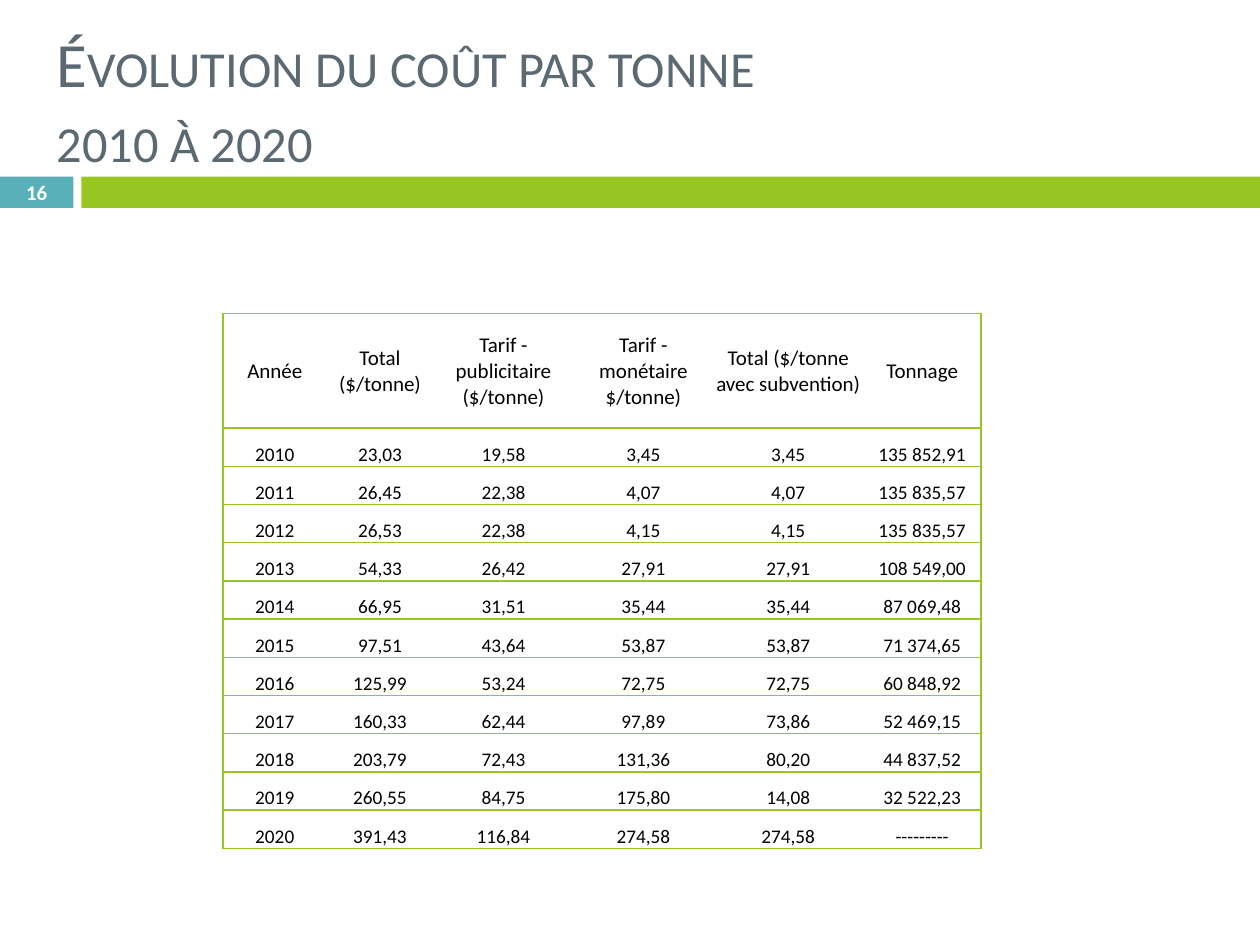
"""Build the slide on the yearly cost per tonne, with its table of rates."""
from dataclasses import dataclass

from lxml.etree import SubElement
from pptx import Presentation
from pptx.dml.color import RGBColor
from pptx.enum.shapes import MSO_SHAPE
from pptx.enum.text import MSO_ANCHOR, PP_ALIGN
from pptx.oxml.ns import qn
from pptx.util import Cm, Pt

FONT = "Calibri"
COLORS = {"teal": "59B0B9", "green": "98C723", "slate": "5B6973",
          "black": "000000", "white": "FFFFFF"}
COL_WIDTHS = [2.08, 2.16, 2.82, 2.82, 3.02, 2.38]
HEADER_HEIGHT, ROW_HEIGHT = 2.31, 0.77
HEADERS = ["Année", "Total ($/tonne)", "Tarif - publicitaire ($/tonne)",
           "Tarif - monétaire $/tonne)", "Total ($/tonne avec subvention)", "Tonnage"]
COSTS = [
    ["2010", "23,03", "19,58", "3,45", "3,45", "135 852,91"],
    ["2011", "26,45", "22,38", "4,07", "4,07", "135 835,57"],
    ["2012", "26,53", "22,38", "4,15", "4,15", "135 835,57"],
    ["2013", "54,33", "26,42", "27,91", "27,91", "108 549,00"],
    ["2014", "66,95", "31,51", "35,44", "35,44", "87 069,48"],
    ["2015", "97,51", "43,64", "53,87", "53,87", "71 374,65"],
    ["2016", "125,99", "53,24", "72,75", "72,75", "60 848,92"],
    ["2017", "160,33", "62,44", "97,89", "73,86", "52 469,15"],
    ["2018", "203,79", "72,43", "131,36", "80,20", "44 837,52"],
    ["2019", "260,55", "84,75", "175,80", "14,08", "32 522,23"],
    ["2020", "391,43", "116,84", "274,58", "274,58", "---------"],
]


@dataclass
class Box:
    """Place and size in centimetres."""
    left: float
    top: float
    width: float
    height: float

    def lengths(self) -> list:
        """Return the four lengths in the order the shape methods take."""
        return [Cm(v) for v in (self.left, self.top, self.width, self.height)]


@dataclass
class Bar:
    """A plain filled bar."""
    box: Box
    color: str


@dataclass
class Label:
    """A text box with one style."""
    box: Box
    lines: list
    size: float
    color: str
    align: PP_ALIGN = PP_ALIGN.LEFT
    bold: bool = False
    small_caps: bool = False


BARS = [Bar(Box(0, 3.56, 1.48, 0.63), "teal"),
        Bar(Box(1.64, 3.56, 23.76, 0.63), "green")]
LABELS = [
    Label(Box(0.89, 0.64, 23.6, 2.74), ["Évolution du coût par tonne", "2010 à 2020"],
          36, "slate", small_caps=True),
    Label(Box(0, 3.53, 1.48, 0.69), ["16"], 11.9, "white", PP_ALIGN.CENTER, bold=True),
]


def rgb(name: str) -> RGBColor:
    """Look up a named colour."""
    return RGBColor.from_string(COLORS[name])


def add_run(p, text: str, size: float, color: str, bold: bool = False):
    """Append one styled run to a paragraph."""
    r = p.add_run()
    r.text = text
    r.font.name, r.font.size, r.font.bold = FONT, Pt(size), bold
    r.font.color.rgb = rgb(color)
    return r


def draw_bar(s, bar: Bar) -> None:
    """Draw a filled bar without outline."""
    sp = s.shapes.add_shape(MSO_SHAPE.RECTANGLE, *bar.box.lengths())
    sp.shadow.inherit = False
    sp.fill.solid()
    sp.fill.fore_color.rgb = rgb(bar.color)
    sp.line.fill.background()


def draw_label(s, label: Label) -> None:
    """Draw a vertically centred text box."""
    tf = s.shapes.add_textbox(*label.box.lengths()).text_frame
    tf.word_wrap = True
    tf.vertical_anchor = MSO_ANCHOR.MIDDLE
    tf.margin_top = tf.margin_bottom = Cm(0.13)
    p = tf.paragraphs[0]
    p.alignment = label.align
    for i, line in enumerate(label.lines):
        if i:
            p.add_line_break()
        r = add_run(p, line, label.size, label.color, label.bold)
        if label.small_caps:
            r.font._element.set("cap", "small")


def set_borders(cell, sides: str) -> None:
    """Rule the given sides in green and leave the others open."""
    tc_pr = cell._tc.get_or_add_tcPr()
    for side in "LRTB":
        ln = SubElement(tc_pr, qn(f"a:ln{side}"), w=str(Pt(1)))
        if side in sides:
            fill = SubElement(ln, qn("a:solidFill"))
            SubElement(fill, qn("a:srgbClr"), val=COLORS["green"])
        else:
            SubElement(ln, qn("a:noFill"))


def fill_cell(cell, text: str, size: float, anchor: MSO_ANCHOR, sides: str) -> None:
    """Write, rule and paint one table cell."""
    cell.margin_left = cell.margin_right = cell.margin_top = Cm(0.02)
    cell.margin_bottom = 0
    cell.vertical_anchor = anchor
    set_borders(cell, sides)
    cell.fill.solid()
    cell.fill.fore_color.rgb = rgb("white")
    p = cell.text_frame.paragraphs[0]
    p.alignment = PP_ALIGN.CENTER
    add_run(p, text, size, "black")


def draw_table(s, left: float, top: float) -> None:
    """Draw the cost table with green rules and an outer frame."""
    rows = [HEADERS, *COSTS]
    box = Box(left, top, sum(COL_WIDTHS), HEADER_HEIGHT + ROW_HEIGHT * len(COSTS))
    tbl = s.shapes.add_table(len(rows), len(HEADERS), *box.lengths()).table
    tbl.first_row = tbl.horz_banding = False
    for col, width in zip(tbl.columns, COL_WIDTHS):
        col.width = Cm(width)
    for i, values in enumerate(rows):
        tbl.rows[i].height = Cm(ROW_HEIGHT if i else HEADER_HEIGHT)
        size, anchor = (11, MSO_ANCHOR.BOTTOM) if i else (12, MSO_ANCHOR.MIDDLE)
        for j, text in enumerate(values):
            sides = "TB" + {0: "L", len(values) - 1: "R"}.get(j, "")
            fill_cell(tbl.cell(i, j), text, size, anchor, sides)


def main() -> None:
    """Build and save the slide."""
    prs = Presentation()
    prs.slide_width, prs.slide_height = Cm(25.4), Cm(19.05)
    s = prs.slides.add_slide(prs.slide_layouts[6])
    for bar in BARS:
        draw_bar(s, bar)
    for label in LABELS:
        draw_label(s, label)
    draw_table(s, 4.5, 6.32)
    prs.save("out.pptx")


if __name__ == "__main__":
    main()
